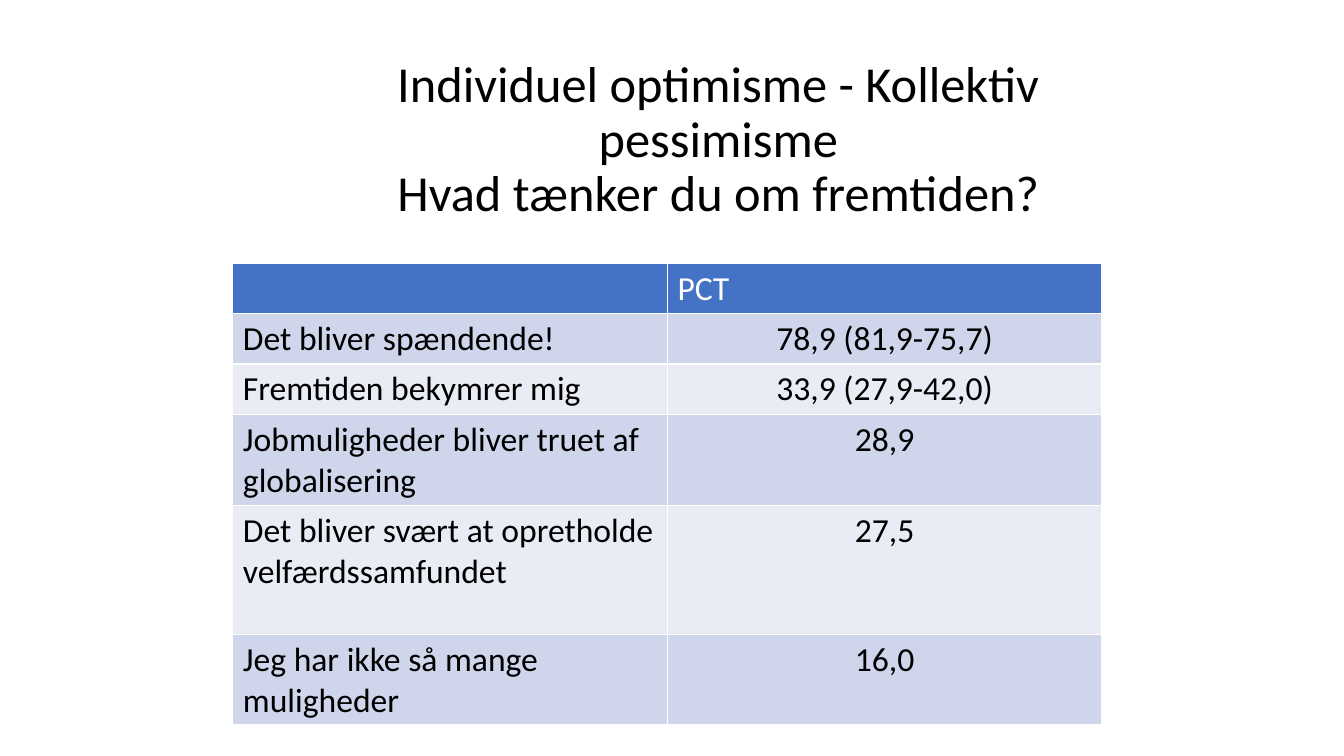
from pptx import Presentation
from pptx.dml.color import RGBColor
from pptx.enum.text import MSO_ANCHOR, PP_ALIGN
from pptx.util import Inches, Pt

LEFT, CENTER = PP_ALIGN.LEFT, PP_ALIGN.CENTER
MIDDLE = MSO_ANCHOR.MIDDLE

# Content
TITLE = "Individuel optimisme - Kollektiv pessimisme\nHvad tænker du om fremtiden?"
HEADER = ("", "PCT")
ANSWERS = [
    ("Det bliver spændende!", "78,9 (81,9-75,7)"),
    ("Fremtiden bekymrer mig", "33,9 (27,9-42,0)"),
    ("Jobmuligheder bliver truet af globalisering", "28,9"),
    ("Det bliver svært at opretholde velfærdssamfundet", "27,5"),
    ("Jeg har ikke så mange muligheder", "16,0"),
]

# Look and layout, in inches
FONT = "Calibri"
COLORS = {"text": "000000", "header_text": "FFFFFF", "header": "4472C4",
          "odd": "CFD5EA", "even": "E9EBF5"}
SLIDE_W, SLIDE_H = 13.33, 7.5
TITLE_BOX = (2.61, 1.01, 9.03, 0.78)
TABLE_LEFT, TABLE_TOP = 2.31, 2.61
COLUMN_W = 4.31
ROW_HEIGHTS = (0.5, 0.5, 0.5, 0.9, 1.28, 0.9)


def write(frame, text, size=24, color="text", align=LEFT, spacing=None):
    paragraph = frame.paragraphs[0]
    paragraph.text = text
    paragraph.alignment = align
    paragraph.line_spacing = spacing
    for run in paragraph.runs:
        run.font.name = FONT
        run.font.size = Pt(size)
        run.font.bold = False
        run.font.color.rgb = RGBColor.from_string(COLORS[color])


prs = Presentation()
prs.slide_width, prs.slide_height = Inches(SLIDE_W), Inches(SLIDE_H)
slide = prs.slides.add_slide(prs.slide_layouts[6])

# Title
title = slide.shapes.add_textbox(*map(Inches, TITLE_BOX)).text_frame
title.word_wrap = True
title.vertical_anchor = MIDDLE
write(title, TITLE, size=36, align=CENTER, spacing=0.9)

# Answer table
rows = [HEADER, *ANSWERS]
table = slide.shapes.add_table(
    len(rows), len(HEADER), Inches(TABLE_LEFT), Inches(TABLE_TOP),
    Inches(COLUMN_W * len(HEADER)), Inches(sum(ROW_HEIGHTS))).table
for column in table.columns:
    column.width = Inches(COLUMN_W)

for r, (answer_row, height) in enumerate(zip(rows, ROW_HEIGHTS)):
    table.rows[r].height = Inches(height)
    is_header = r == 0
    band = "header" if is_header else ("odd" if r % 2 else "even")
    for c, text in enumerate(answer_row):
        cell = table.cell(r, c)
        cell.fill.solid()
        cell.fill.fore_color.rgb = RGBColor.from_string(COLORS[band])
        write(cell.text_frame, text,
              color="header_text" if is_header else "text",
              align=CENTER if c and not is_header else LEFT)

prs.save("out.pptx")
